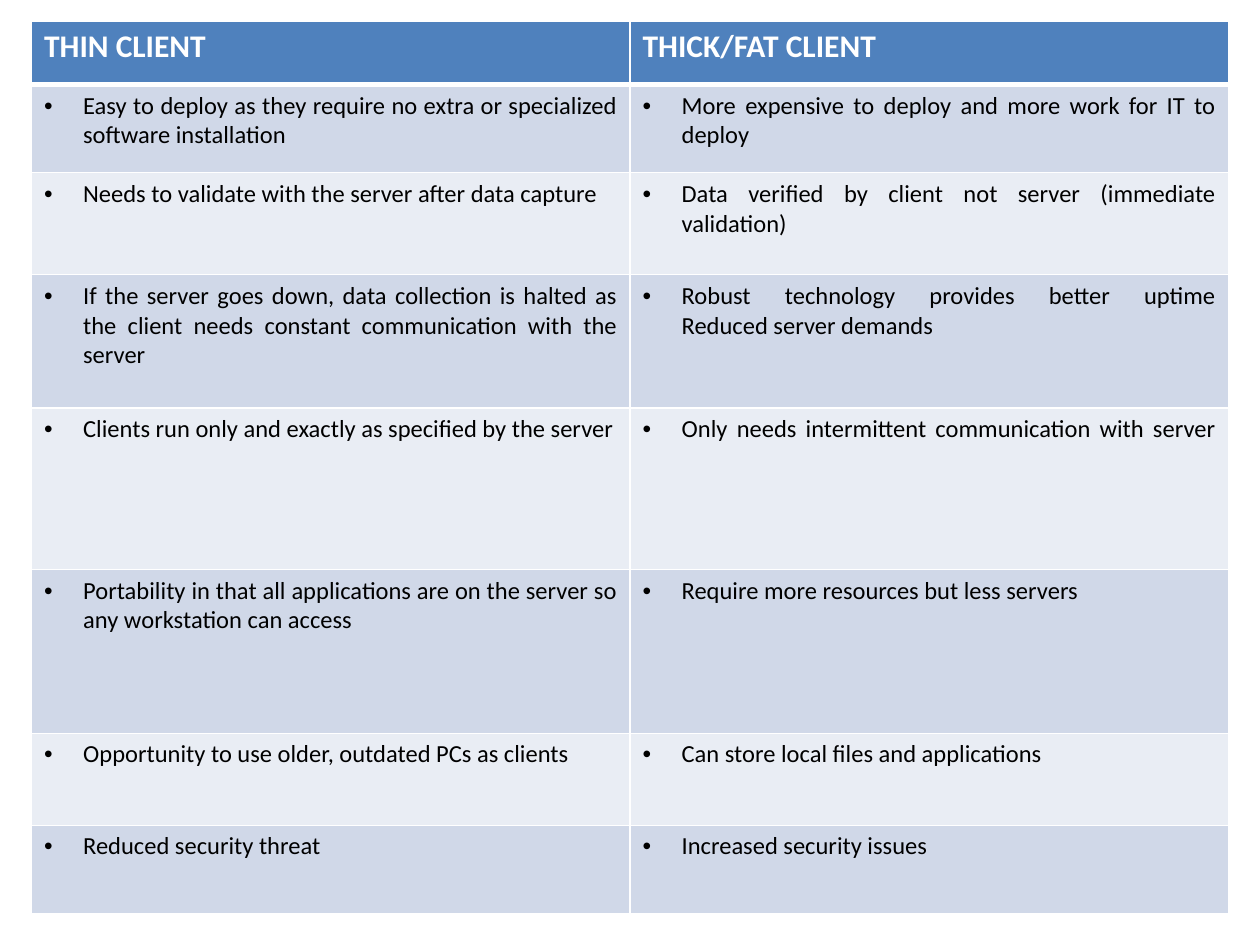
from dataclasses import dataclass
from typing import NamedTuple

import pptx
import pptx.dml.color
import pptx.enum.text
import pptx.oxml
import pptx.oxml.ns
import pptx.table
import pptx.util
from lxml import etree
from pptx.util import Inches


@dataclass(frozen=True)
class Theme:
    font: str = "Calibri"
    header_size: int = 18
    body_size: int = 14
    header_fill: str = "4F81BD"
    header_text: str = "FFFFFF"
    body_text: str = "000000"
    bands: tuple[str, str] = ("D0D8E8", "E9EDF4")
    border: str = "FFFFFF"
    border_width: float = 1
    header_rule_width: float = 3
    bullet_indent: float = 0.31


class Comparison(NamedTuple):
    thin: str
    thick: str
    height: float


THEME = Theme()
HEADER = Comparison("THIN CLIENT", "THICK/FAT CLIENT", 0.5)
COMPARISONS = [
    Comparison("Easy to deploy as they require no extra or specialized software installation",
               "More expensive to deploy and more work for IT to deploy", 0.7),
    Comparison("Needs to validate with the server after data capture",
               "Data verified by client not server (immediate validation)", 0.81),
    Comparison("If the server goes down, data collection is halted as the client needs "
               "constant communication with the server",
               "Robust technology provides better uptime\vReduced server demands", 1.06),
    Comparison("Clients run only and exactly as specified by the server",
               "Only needs intermittent communication with server\v", 1.28),
    Comparison("Portability in that all applications are on the server so any workstation can access",
               "Require more resources but less servers", 1.3),
    Comparison("Opportunity to use older, outdated PCs as clients",
               "Can store local files and applications", 0.73),
    Comparison("Reduced security threat", "Increased security issues", 0.7),
]
LEFT, TOP, COLUMN_WIDTH = 0.25, 0.17, 4.75


def set_borders(cell: pptx.table._Cell, top: float, bottom: float) -> None:
    """Draw all four cell edges; top and bottom are widths in points."""
    properties = cell._tc.get_or_add_tcPr()
    widths = {"L": THEME.border_width, "R": THEME.border_width, "T": top, "B": bottom}
    for index, (side, width) in enumerate(widths.items()):
        line = pptx.oxml.parse_xml(
            f'<a:ln{side} {pptx.oxml.ns.nsdecls("a")} w="{pptx.util.Pt(width)}">'
            f'<a:solidFill><a:srgbClr val="{THEME.border}"/></a:solidFill></a:ln{side}>')
        properties.insert(index, line)


def add_bullet(paragraph: pptx.text.text._Paragraph) -> None:
    properties = paragraph._p.get_or_add_pPr()
    indent = Inches(THEME.bullet_indent)
    properties.set("marL", str(indent))
    properties.set("indent", str(-indent))
    etree.SubElement(properties, pptx.oxml.ns.qn("a:buFont"), typeface="Arial")
    etree.SubElement(properties, pptx.oxml.ns.qn("a:buChar"), char="•")


def fill_cell(cell: pptx.table._Cell, text: str, fill: str, is_header: bool) -> None:
    cell.fill.solid()
    cell.fill.fore_color.rgb = pptx.dml.color.RGBColor.from_string(fill)
    paragraph = cell.text_frame.paragraphs[0]
    paragraph.text = text
    if not is_header:
        paragraph.alignment = pptx.enum.text.PP_ALIGN.JUSTIFY
        add_bullet(paragraph)
    font = paragraph.font
    font.name = THEME.font
    font.size = pptx.util.Pt(THEME.header_size if is_header else THEME.body_size)
    font.bold = is_header
    font.color.rgb = pptx.dml.color.RGBColor.from_string(
        THEME.header_text if is_header else THEME.body_text)


def add_comparison_table(slide: pptx.slide.Slide) -> None:
    rows = [HEADER, *COMPARISONS]
    table = slide.shapes.add_table(
        len(rows), 2, Inches(LEFT), Inches(TOP), Inches(2 * COLUMN_WIDTH),
        Inches(sum(row.height for row in rows))).table
    for column in table.columns:
        column.width = Inches(COLUMN_WIDTH)
    for index, row in enumerate(rows):
        table.rows[index].height = Inches(row.height)
        is_header = index == 0
        fill = THEME.header_fill if is_header else THEME.bands[(index - 1) % 2]
        top = THEME.header_rule_width if index == 1 else THEME.border_width
        bottom = THEME.header_rule_width if is_header else THEME.border_width
        for cell, text in zip(table.rows[index].cells, (row.thin, row.thick)):
            fill_cell(cell, text, fill, is_header)
            set_borders(cell, top, bottom)


def main() -> None:
    presentation = pptx.Presentation()
    presentation.slide_width = Inches(10)
    presentation.slide_height = Inches(7.5)
    slide = presentation.slides.add_slide(presentation.slide_layouts[6])
    add_comparison_table(slide)
    presentation.save("out.pptx")


if __name__ == "__main__":
    main()
